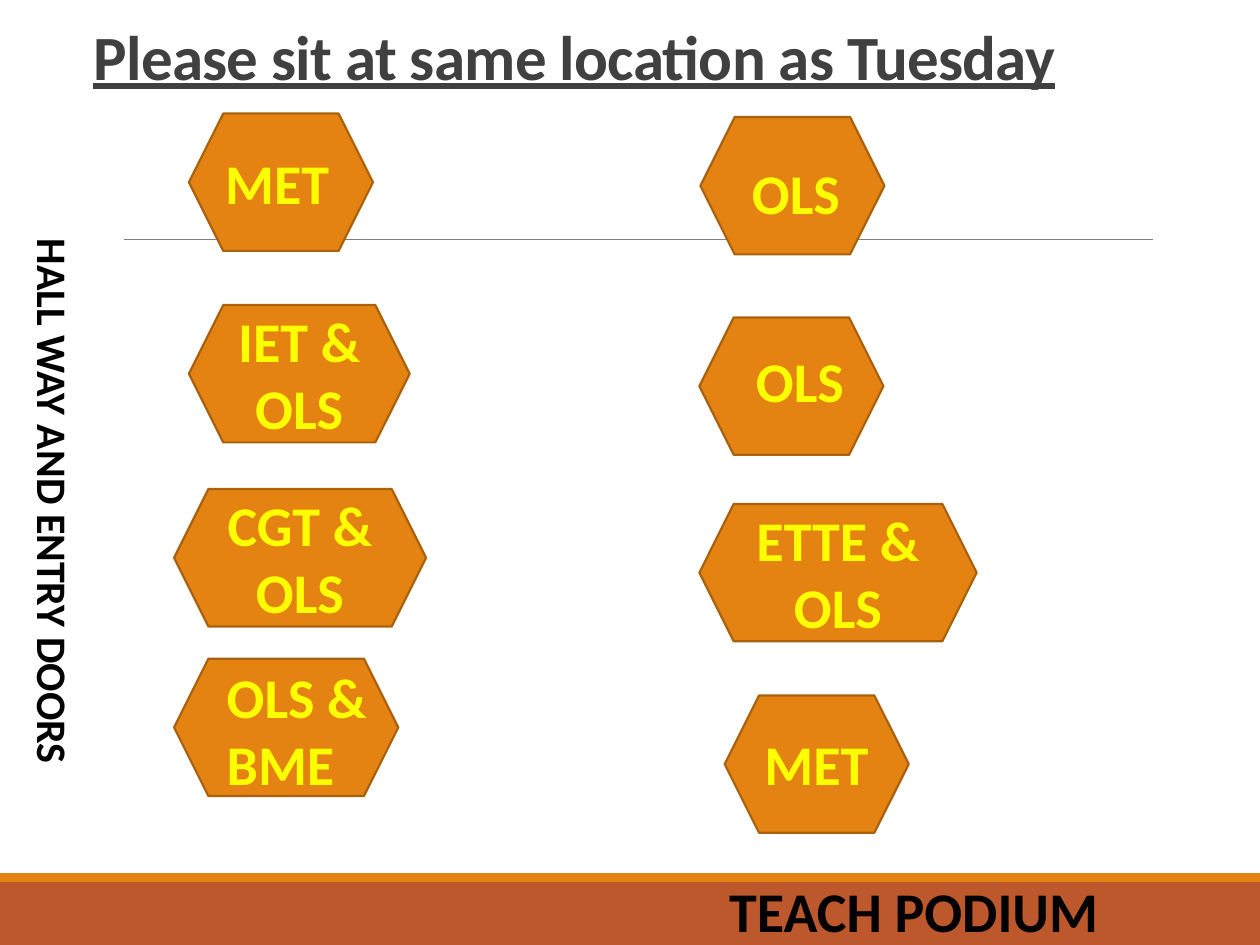
from dataclasses import dataclass

from lxml.etree import SubElement
from pptx import Presentation
from pptx.dml.color import RGBColor
from pptx.enum.shapes import MSO_CONNECTOR, MSO_SHAPE
from pptx.enum.text import MSO_ANCHOR, MSO_AUTO_SIZE, PP_ALIGN
from pptx.oxml.ns import qn
from pptx.util import Cm, Pt


@dataclass(frozen=True)
class Theme:
    """Colours, font and type sizes of the seating plan."""

    font: str = "Calibri"
    orange: str = "E48312"
    rust: str = "BD582C"
    outline: str = "A9610D"
    rule: str = "808080"
    heading: str = "404040"
    ink: str = "000000"
    label: str = "FFFF00"
    title_size: int = 36
    label_size: int = 32
    side_size: int = 24


class SeatingSlide:
    """Draws the elements of the seating plan on one slide."""

    def __init__(self, page, theme):
        self.page = page
        self.theme = theme

    def add_span(self, para, text, size, color):
        span = para.add_run()
        span.text = text
        span.font.name = self.theme.font
        span.font.size = Pt(size)
        span.font.bold = True
        span.font.color.rgb = RGBColor.from_string(color)
        return span

    def title(self, text, left, top, width, height):
        box = self.page.shapes.title
        box.left, box.top, box.width, box.height = map(Cm, (left, top, width, height))
        frame = box.text_frame
        frame.auto_size = MSO_AUTO_SIZE.NONE
        frame.vertical_anchor = MSO_ANCHOR.BOTTOM
        para = frame.paragraphs[0]
        para.alignment = PP_ALIGN.LEFT
        para.line_spacing = 0.85
        span = self.add_span(para, text, self.theme.title_size, self.theme.heading)
        span.font.underline = True
        span.font._element.set("spc", "-40")

    def shape(self, kind, left, top, width, height, fill):
        shape = self.page.shapes.add_shape(kind, *map(Cm, (left, top, width, height)))
        shape.shadow.inherit = False
        shape.fill.solid()
        shape.fill.fore_color.rgb = RGBColor.from_string(fill)
        return shape

    def band(self, top, height, fill):
        band = self.shape(MSO_SHAPE.RECTANGLE, 0, top, 25.4, height, fill)
        band.line.fill.background()

    def rule(self, left, right, top):
        rule = self.page.shapes.add_connector(
            MSO_CONNECTOR.STRAIGHT, Cm(left), Cm(top), Cm(right), Cm(top)
        )
        rule.line.color.rgb = RGBColor.from_string(self.theme.rule)
        rule.line.width = Pt(0.5)
        SubElement(rule._element.spPr, qn("a:effectLst"))

    def table_seat(self, left, top, width=3.71, lines=()):
        seat = self.shape(MSO_SHAPE.HEXAGON, left, top, width, 2.77, self.theme.orange)
        seat.line.color.rgb = RGBColor.from_string(self.theme.outline)
        seat.line.width = Pt(1.25)
        frame = seat.text_frame
        frame.vertical_anchor = MSO_ANCHOR.MIDDLE
        for index, text in enumerate(lines):
            para = frame.add_paragraph() if index else frame.paragraphs[0]
            para.alignment = PP_ALIGN.CENTER
            self.add_span(para, text, self.theme.label_size, self.theme.label)

    def text(self, text, left, top, width, height, size, color, rotation=0):
        box = self.page.shapes.add_textbox(*map(Cm, (left, top, width, height)))
        box.rotation = rotation
        frame = box.text_frame
        frame.word_wrap = True
        frame.auto_size = MSO_AUTO_SIZE.SHAPE_TO_FIT_TEXT
        self.add_span(frame.paragraphs[0], text, size, color)

    def seat_label(self, text, left, top, width=2.95, height=1.63):
        self.text(text, left, top, width, height, self.theme.label_size, self.theme.label)


def main():
    theme = Theme()
    deck = Presentation()
    deck.slide_width, deck.slide_height = Cm(25.4), Cm(19.05)
    plan = SeatingSlide(deck.slides.add_slide(deck.slide_layouts[5]), theme)

    plan.band(17.78, 1.27, theme.rust)
    plan.band(17.6, 0.18, theme.orange)
    plan.rule(2.49, 23.24, 4.83)
    plan.title("Please sit at same location as Tuesday", 1.63, 0.53, 24.26, 1.47)
    plan.text("TEACH PODIUM", 14.45, 17.55, 8.64, 1.63, theme.label_size, theme.ink)
    plan.text("HALL WAY AND ENTRY DOORS", -4.57, 9.55, 11.28, 1.3,
              theme.side_size, theme.ink, rotation=90)

    plan.table_seat(3.81, 2.29)
    plan.seat_label("MET", 4.29, 2.87)
    plan.table_seat(3.81, 6.15, 4.45, ("IET &", "OLS"))
    plan.table_seat(3.51, 9.86, 5.08, ("CGT &", "OLS"))
    plan.table_seat(3.51, 13.28, 4.52)
    plan.seat_label("OLS & BME", 4.32, 13.23, 3.71, 3)

    plan.table_seat(14.12, 2.36)
    plan.seat_label("OLS", 14.91, 3.07)
    plan.table_seat(14.1, 6.4)
    plan.seat_label("OLS", 14.99, 6.86)
    plan.table_seat(14.1, 10.16, 5.59, ("ETTE &", "OLS"))
    plan.table_seat(14.61, 14.02)
    plan.seat_label("MET", 15.16, 14.58)

    deck.save("out.pptx")


if __name__ == "__main__":
    main()
